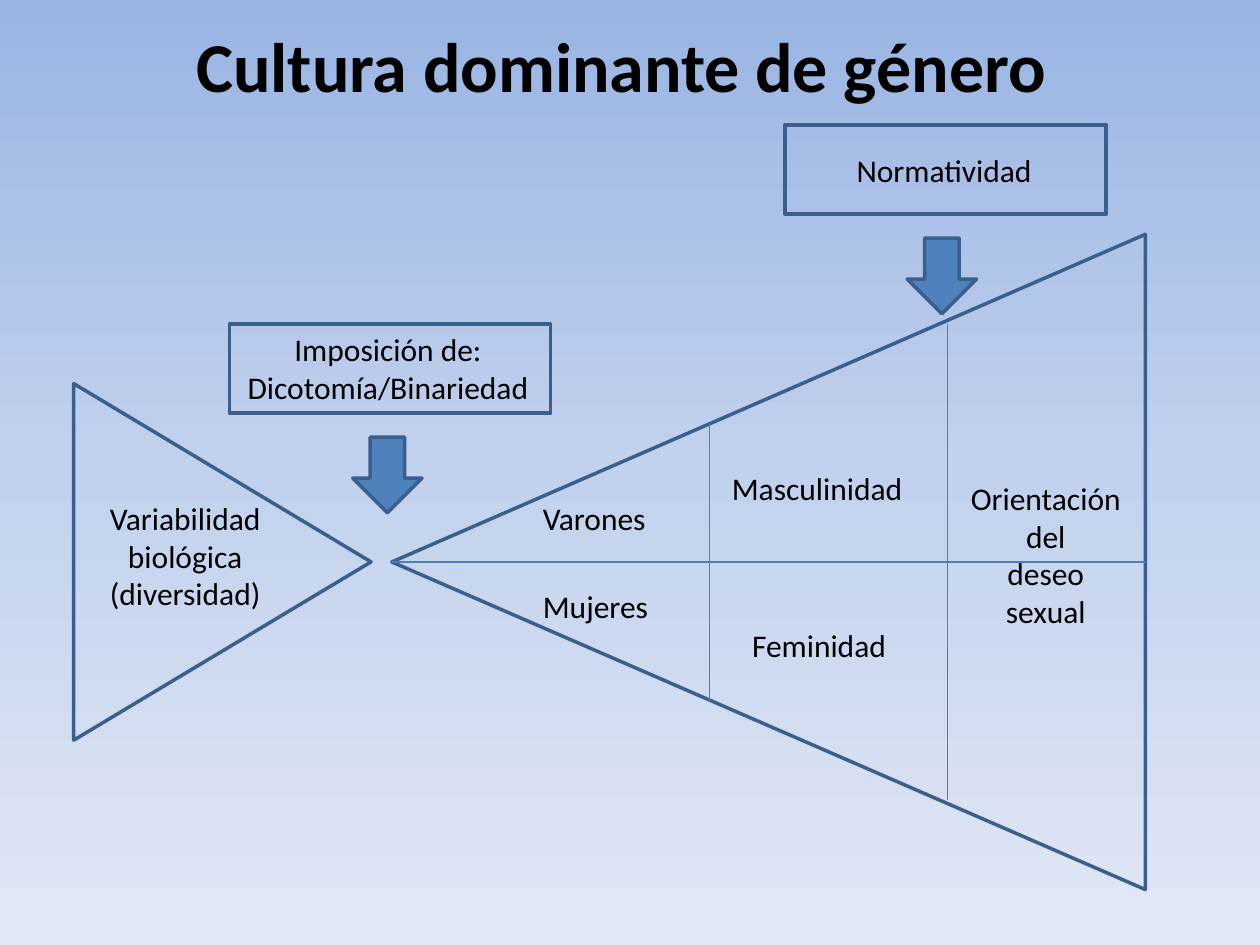
from copy import deepcopy

from lxml.etree import SubElement
from pptx import Presentation
from pptx.dml.color import RGBColor
from pptx.enum.shapes import MSO_CONNECTOR, MSO_SHAPE
from pptx.enum.text import MSO_ANCHOR, MSO_AUTO_SIZE, PP_ALIGN
from pptx.oxml.ns import qn
from pptx.util import Inches, Pt

COLORS = {
    "sky_top": "9AB5E4",
    "sky_middle": "C2D1ED",
    "sky_bottom": "E1E8F5",
    "text": "000000",
    "outline": "3A5F8C",
    "arrow": "4F81BD",
    "divider": "4B7EBC",
}


def rgb(name):
    return RGBColor.from_string(COLORS[name])


def add_label(box, lines, align=PP_ALIGN.LEFT, wrap=False, size=18, bold=False):
    label = slide.shapes.add_textbox(*map(Inches, box))
    frame = label.text_frame
    frame.word_wrap = wrap
    for index, line in enumerate(lines):
        paragraph = frame.paragraphs[0] if index == 0 else frame.add_paragraph()
        paragraph.alignment = align
        run = paragraph.add_run()
        run.text = line
        run.font.name = "Calibri"
        run.font.size = Pt(size)
        run.font.bold = bold
        run.font.color.rgb = rgb("text")
    return frame


prs = Presentation()
prs.slide_width, prs.slide_height = Inches(10), Inches(7.5)
slide = prs.slides.add_slide(prs.slide_layouts[6])

sky = slide.background.fill
sky.gradient()
sky.gradient_angle = 270
stop_list = slide.element.find(".//" + qn("a:gsLst"))
stop_list.insert(1, deepcopy(stop_list[0]))
for stop, position, name in zip(
    sky.gradient_stops, (0, 0.5, 1), ("sky_top", "sky_middle", "sky_bottom")
):
    stop.position = position
    stop.color.rgb = rgb(name)

title = add_label((0.43, -0.11, 9, 1.25), ["Cultura dominante de género"],
                  PP_ALIGN.CENTER, wrap=True, size=40, bold=True)
title.vertical_anchor = MSO_ANCHOR.MIDDLE

for kind, box, rotation, fill in [
    (MSO_SHAPE.ISOSCELES_TRIANGLE, (0.35, 3.28, 2.83, 2.36), 90, None),
    (MSO_SHAPE.ISOSCELES_TRIANGLE, (3.5, 1.47, 5.2, 5.98), 270, None),
    (MSO_SHAPE.RECTANGLE, (1.82, 2.57, 2.55, 0.71), 0, None),
    (MSO_SHAPE.RECTANGLE, (6.23, 0.99, 2.55, 0.71), 0, None),
    (MSO_SHAPE.DOWN_ARROW, (2.8, 3.47, 0.55, 0.6), 0, "arrow"),
    (MSO_SHAPE.DOWN_ARROW, (7.2, 1.89, 0.55, 0.6), 0, "arrow"),
]:
    figure = slide.shapes.add_shape(kind, *map(Inches, box))
    figure.rotation = rotation
    figure.shadow.inherit = False
    if fill:
        figure.fill.solid()
        figure.fill.fore_color.rgb = rgb(fill)
    else:
        figure.fill.background()
    figure.line.color.rgb = rgb("outline")
    figure.line.width = Pt(2)

for ends in [
    (3.11, 4.46, 9.09, 4.46),
    (5.63, 3.36, 5.63, 5.56),
    (7.52, 2.57, 7.52, 6.35),
]:
    divider = slide.shapes.add_connector(MSO_CONNECTOR.STRAIGHT, *map(Inches, ends))
    divider.line.color.rgb = rgb("divider")
    divider.line.width = Pt(0.75)
    SubElement(divider.element.spPr, qn("a:effectLst"))

for box, lines, align, wrap in [
    ((1.85, 2.57, 2.46, 0.71), ["Imposición de:", "Dicotomía/Binariedad"], PP_ALIGN.CENTER, False),
    ((0.51, 3.91, 1.92, 1.01), ["Variabilidad biológica", "(diversidad)"], PP_ALIGN.CENTER, True),
    ((4.21, 3.91, 1.03, 0.4), ["Varones"], PP_ALIGN.LEFT, False),
    ((4.21, 4.61, 1.05, 0.4), ["Mujeres"], PP_ALIGN.LEFT, False),
    ((5.71, 3.67, 1.57, 0.4), ["Masculinidad"], PP_ALIGN.LEFT, False),
    ((5.87, 4.92, 1.28, 0.4), ["Feminidad"], PP_ALIGN.LEFT, False),
    ((7.6, 3.75, 1.4, 1.31), ["Orientación", "del", "deseo", "sexual"], PP_ALIGN.CENTER, False),
    ((6.7, 1.15, 1.61, 0.4), ["Normatividad"], PP_ALIGN.LEFT, False),
]:
    add_label(box, lines, align, wrap).auto_size = MSO_AUTO_SIZE.SHAPE_TO_FIT_TEXT

prs.save("out.pptx")
